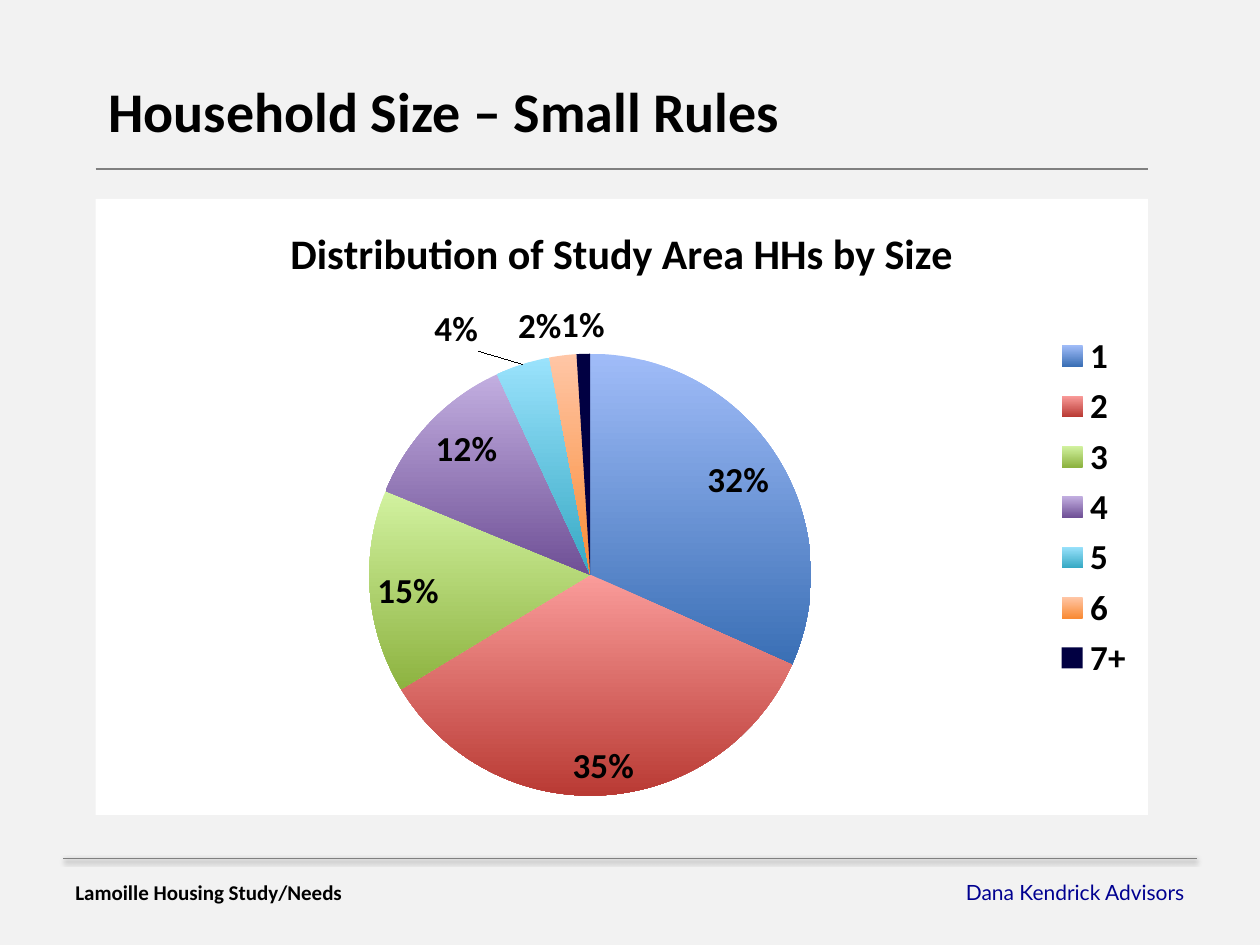
from collections import namedtuple

from lxml import etree
from pptx import Presentation
from pptx import util as u
from pptx.chart.data import CategoryChartData
from pptx.dml.color import RGBColor
from pptx.enum import chart as kinds, shapes, text
from pptx.oxml import parse_xml
from pptx.oxml.ns import nsdecls, qn

Box = namedtuple("Box", "left top width height")

COLOURS = {
    "page": "F2F2F2", "panel": "FFFFFF", "rule": "808080",
    "text": "000000", "firm": "000090", "seven": "010042",
}
SLICES = [
    ("1", 0.32, "A0BCF8", "3A6FB5"),
    ("2", 0.35, "FA9C9A", "B93A34"),
    ("3", 0.15, "D2F2A0", "8DB340"),
    ("4", 0.12, "C2AEE0", "6F5096"),
    ("5", 0.04, "9AE2FC", "36A9C4"),
    ("6", 0.02, "FFC6A6", "F98B35"),
    ("7+", 0.01, COLOURS["seven"], COLOURS["seven"]),
]
SMALL_SHARE = 0.05


def colour(name):
    """Return the colour for a palette name or a hex string."""
    return RGBColor.from_string(COLOURS.get(name, name))


def lengths(box):
    """Turn a box in centimetres into lengths."""
    return [u.Cm(value) for value in box]


def style_font(font, size, bold=True, face="Calibri", tint="text"):
    """Set the size, weight, face and colour of a font."""
    font.size, font.bold, font.name = u.Pt(size), bold, face
    font.color.rgb = colour(tint)


def write(frame, words, align=text.PP_ALIGN.LEFT, **font):
    """Put one formatted line of text in a frame."""
    frame.word_wrap = True
    frame.auto_size = text.MSO_AUTO_SIZE.SHAPE_TO_FIT_TEXT
    para = frame.paragraphs[0]
    para.alignment = align
    span = para.add_run()
    span.text = words
    style_font(span.font, **font)


def add_rule(page, box, top, width, shadow=False):
    """Draw a grey rule across a box at the given height."""
    rule = page.shapes.add_connector(
        shapes.MSO_CONNECTOR.STRAIGHT, u.Cm(box.left), u.Cm(top),
        u.Cm(box.left + box.width), u.Cm(top))
    rule.line.color.rgb = colour("rule")
    rule.line.width = u.Pt(width)
    properties = rule._element.spPr
    effects = etree.SubElement(properties, qn("a:effectLst"))
    if shadow:
        effects.append(parse_xml(
            f'<a:outerShdw {nsdecls("a")} blurRad="40000" dist="20000" '
            'dir="5400000" rotWithShape="0"><a:srgbClr val="000000">'
            '<a:alpha val="38000"/></a:srgbClr></a:outerShdw>'))


def add_backdrop(page, box):
    """Cover the page with light grey."""
    backdrop = page.shapes.add_shape(
        shapes.MSO_SHAPE.RECTANGLE, *lengths(box))
    backdrop.shadow.inherit = False
    backdrop.fill.solid()
    backdrop.fill.fore_color.rgb = colour("page")
    backdrop.line.color.rgb = colour("page")
    page.shapes._spTree.insert(2, backdrop._element)


def add_heading(page, box, words):
    """Place the title with a rule under it."""
    title = page.shapes.title
    title.left, title.top, title.width, title.height = lengths(
        Box(box.left, box.top, 20.22, 1.63))
    write(title.text_frame, words, size=32)
    title.text_frame.vertical_anchor = text.MSO_ANCHOR.TOP
    add_rule(page, box, box.top + box.height, 1)


def add_footer(page, box, study, firm):
    """Place the footer rule with one line of text at each end."""
    add_rule(page, box, box.top, 0.5, shadow=True)
    width = 7.52
    ends = [
        (0, study, text.PP_ALIGN.LEFT, {}),
        (box.width - width, firm, text.PP_ALIGN.RIGHT,
         {"bold": False, "face": "Lato", "tint": "firm"}),
    ]
    for offset, words, align, font in ends:
        area = Box(box.left + offset, box.top + 0.3, width, box.height - 0.3)
        label = page.shapes.add_textbox(*lengths(area))
        write(label.text_frame, words, align, size=12, **font)


def manual_layout(x, y, width=None, height=None):
    """Build a chart layout from fractions of the chart area."""
    parts = f'<c:x val="{x}"/><c:y val="{y}"/>'
    if width:
        parts = ('<c:layoutTarget val="inner"/><c:xMode val="edge"/>'
                 f'<c:yMode val="edge"/>{parts}'
                 f'<c:w val="{width}"/><c:h val="{height}"/>')
    return parse_xml(f'<c:layout {nsdecls("c")}><c:manualLayout>{parts}'
                     '</c:manualLayout></c:layout>')


def style_slice(point, share, light, dark):
    """Colour one slice and place its label."""
    fill = point.format.fill
    if light == dark:
        fill.solid()
        fill.fore_color.rgb = colour(light)
    else:
        fill.gradient()
        fill.gradient_angle = 270
        for stop, tint in zip(fill.gradient_stops, (light, dark)):
            stop.color.rgb = colour(tint)
    place = kinds.XL_LABEL_POSITION
    label = point.data_label
    style_font(label.font, 20)
    label.position = (place.OUTSIDE_END if share < SMALL_SHARE
                      else place.INSIDE_END)


def add_pie(page, box, heading):
    """Draw the pie chart on a white panel."""
    data = CategoryChartData(number_format="0%")
    data.categories = [row[0] for row in SLICES]
    data.add_series("Series 1", [row[1] for row in SLICES])
    chart = page.shapes.add_chart(
        kinds.XL_CHART_TYPE.PIE, *lengths(box), data).chart
    style_font(chart.font, 10, bold=False)
    chart._chartSpace.chart.addnext(parse_xml(
        f'<c:spPr {nsdecls("c", "a")}><a:solidFill><a:srgbClr '
        f'val="{COLOURS["panel"]}"/></a:solidFill>'
        '<a:ln><a:noFill/></a:ln></c:spPr>'))

    chart.has_title = True
    span = chart.chart_title.text_frame.paragraphs[0].add_run()
    span.text = heading
    style_font(span.font, 24)
    chart.has_legend = True
    chart.legend.position = kinds.XL_LEGEND_POSITION.RIGHT
    chart.legend.include_in_layout = False
    style_font(chart.legend.font, 20)

    plot = chart.plots[0]
    plot.vary_by_categories = True
    series = plot.series[0]
    labels = series.data_labels
    labels.show_value = True
    labels.number_format, labels.number_format_is_linked = "0%", False
    style_font(labels.font, 20)
    for index, (_, share, light, dark) in enumerate(SLICES):
        style_slice(series.points[index], share, light, dark)
    fifth = labels._element.findall(qn("c:dLbl"))[4]
    fifth.find(qn("c:idx")).addnext(manual_layout(-0.04, -0.01))
    leaders = labels._element.find(qn("c:showLeaderLines"))
    if leaders is None:
        leaders = etree.SubElement(labels._element, qn("c:showLeaderLines"))
    leaders.set("val", "1")

    area = chart._chartSpace.chart.plotArea
    for old in area.findall(qn("c:layout")):
        area.remove(old)
    area.insert(0, manual_layout(0.26, 0.25, 0.42, 0.72))


def main():
    """Build the household size slide."""
    deck = Presentation()
    deck.slide_width, deck.slide_height = u.Cm(25.4), u.Cm(19.05)
    page = deck.slides.add_slide(deck.slide_layouts[5])
    add_backdrop(page, Box(0, 0, 25.4, 19.05))
    add_footer(page, Box(1.27, 17.3, 22.86, 1.06),
               "Lamoille Housing Study/Needs", "Dana Kendrick Advisors")
    add_heading(page, Box(1.93, 1.42, 21.21, 1.98),
                "Household Size – Small Rules")
    add_pie(page, Box(1.93, 4.01, 21.21, 12.42),
            "Distribution of Study Area HHs by Size")
    deck.save("out.pptx")


if __name__ == "__main__":
    main()
